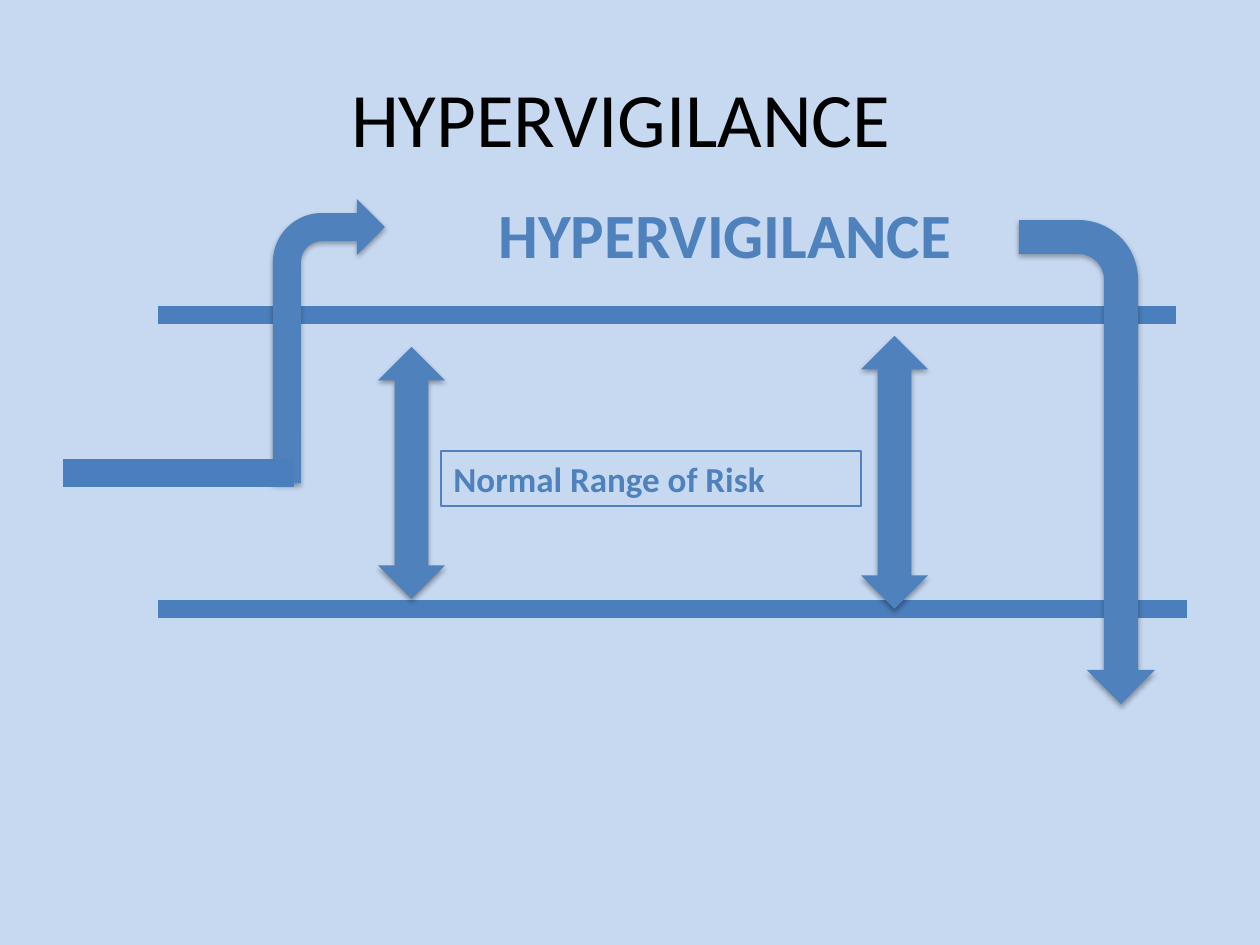
from lxml.etree import SubElement
from pptx import Presentation
from pptx.dml.color import RGBColor
from pptx.enum.shapes import MSO_CONNECTOR as CONN, MSO_SHAPE as SHAPE
from pptx.enum.text import MSO_ANCHOR as ANCHOR, PP_ALIGN as ALIGN
from pptx.oxml.ns import qn
from pptx.util import Emu, Pt

COLORS = {"back": "C6D9F1", "title": "000000", "blue": "4F81BD",
          "line": "4B7EBC", "shadow": "000000"}
FONT = "Calibri"


def px(n):
    return Emu(round(n * 914400 / 126))


def rgb(name):
    return RGBColor.from_string(COLORS[name])


def add_bar(s, x1, y1, x2, y2, width):
    line = s.shapes.add_connector(CONN.STRAIGHT, px(x1), px(y1), px(x2), px(y2))
    line.line.color.rgb = rgb("line")
    line.line.width = Pt(width)
    SubElement(line._element.spPr, qn("a:effectLst"))


def add_arrow(s, kind, x, y, w, h, rotation=0):
    sp = s.shapes.add_shape(kind, px(x), px(y), px(w), px(h))
    sp.rotation = rotation
    sp.fill.solid()
    sp.fill.fore_color.rgb = rgb("blue")
    sp.line.fill.background()
    effects = SubElement(sp._element.spPr, qn("a:effectLst"))
    shadow = SubElement(effects, qn("a:outerShdw"), blurRad=str(Pt(3.1)),
                        dist=str(Pt(1.8)), dir="5400000", rotWithShape="0")
    color = SubElement(shadow, qn("a:srgbClr"), val=COLORS["shadow"])
    SubElement(color, qn("a:alpha"), val="35000")


def add_text(s, x, y, w, h, text, size, color="blue", bold=True,
             align=ALIGN.CENTER, anchor=ANCHOR.TOP):
    sp = s.shapes.add_textbox(px(x), px(y), px(w), px(h))
    tf = sp.text_frame
    tf.word_wrap = True
    tf.vertical_anchor = anchor
    p = tf.paragraphs[0]
    p.alignment = align
    r = p.add_run()
    r.text = text
    r.font.name = FONT
    r.font.size = Pt(size)
    r.font.bold = bold
    r.font.color.rgb = rgb(color)
    return sp


def add_title(s, x, y, w, h):
    add_text(s, x, y, w, h, "HYPERVIGILANCE ", 44, "title", False,
             anchor=ANCHOR.MIDDLE)


def add_normal_range(s, x, y, w, h):
    add_bar(s, x, y, x + w - 11, y, 10)
    add_bar(s, x, y + h, x + w, y + h, 10)
    add_arrow(s, SHAPE.UP_DOWN_ARROW, x + 220, y + 32, 67, 252)
    add_arrow(s, SHAPE.UP_DOWN_ARROW, x + 703, y + 21, 67, h - 21)
    label = add_text(s, x + 283, y + 136, 420, 55, "Normal Range of Risk", 20,
                     align=ALIGN.LEFT)
    label.line.color.rgb = rgb("blue")
    label.line.width = Pt(0.75)


def add_reaction_path(s, x, y, w, h):
    add_arrow(s, SHAPE.BENT_ARROW, x + 210, y + 10, 112, 284)
    add_text(s, x + 368, y, 588, 89, "HYPERVIGILANCE", 36)
    add_bar(s, x + 231, y + 284, x, y + 284, 16)
    drop_w, drop_h = 136, h - 31
    add_arrow(s, SHAPE.BENT_ARROW, x + w - (drop_w + drop_h) / 2,
              y + h - (drop_h + drop_w) / 2, drop_h, drop_w, 90)


def main():
    prs = Presentation()
    prs.slide_width, prs.slide_height = px(1260), px(945)
    s = prs.slides.add_slide(prs.slide_layouts[6])
    s.background.fill.solid()
    s.background.fill.fore_color.rgb = rgb("back")
    add_title(s, 63, 38, 1134, 158)
    add_normal_range(s, 158, 315, 1029, 294)
    add_reaction_path(s, 63, 189, 1092, 515)
    prs.save("out.pptx")


if __name__ == "__main__":
    main()
